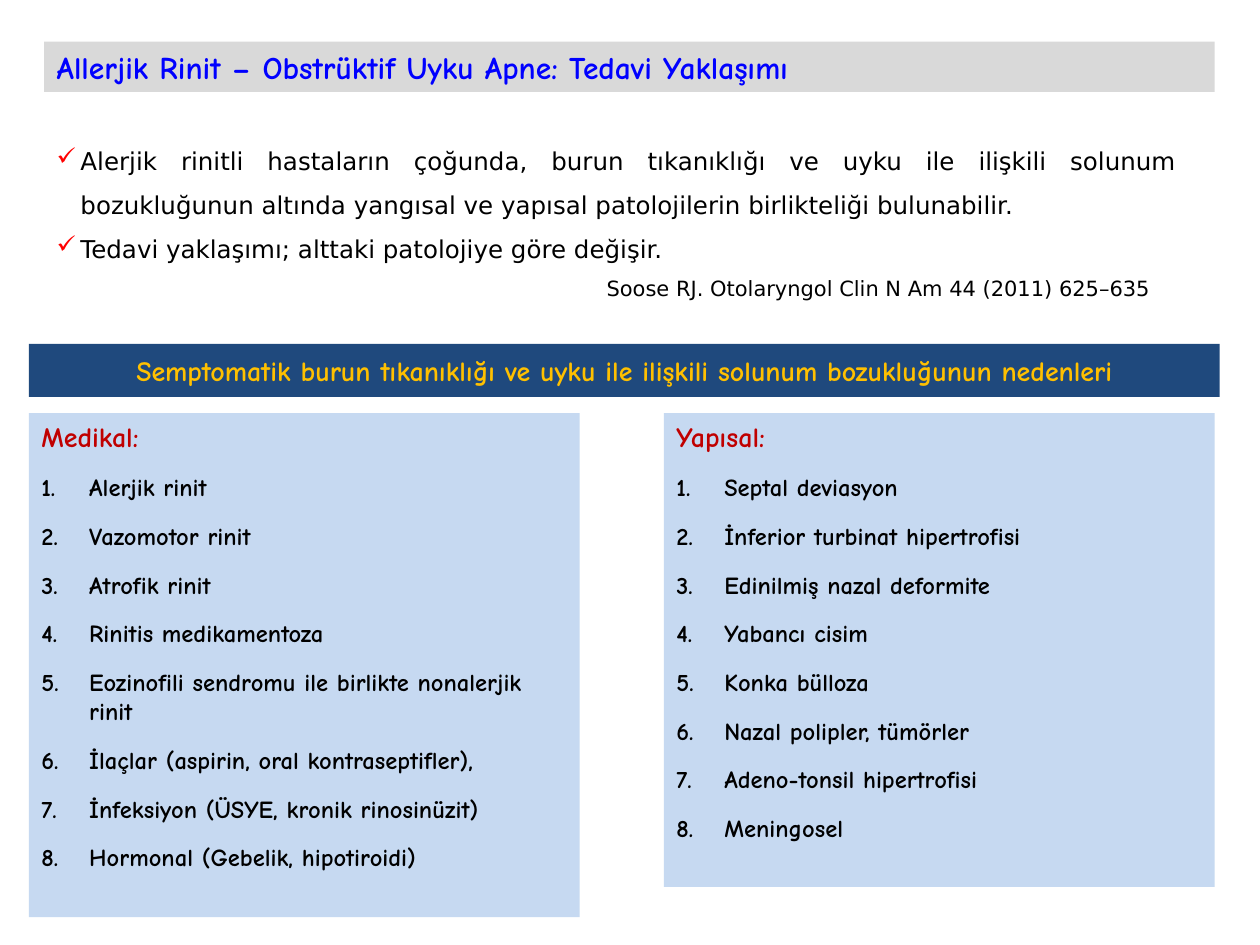
from pptx import Presentation
from pptx.dml.color import RGBColor
from pptx.enum.shapes import MSO_SHAPE as SHAPE
from pptx.enum.text import MSO_ANCHOR as ANCHOR, MSO_AUTO_SIZE as AUTO, PP_ALIGN as ALIGN
from pptx.oxml.ns import qn
from pptx.util import Inches, Pt
from lxml.etree import SubElement

TITLE = "Allerjik Rinit – Obstrüktif Uyku Apne: Tedavi Yaklaşımı"
POINTS = [
    "Alerjik rinitli hastaların çoğunda, burun tıkanıklığı ve uyku ile ilişkili solunum "
    "bozukluğunun altında yangısal ve yapısal patolojilerin birlikteliği bulunabilir.",
    "Tedavi yaklaşımı; alttaki patolojiye göre değişir.",
]
CITATION = "Soose RJ. Otolaryngol Clin N Am 44 (2011) 625–635"
BAND = "Semptomatik burun tıkanıklığı ve uyku ile ilişkili solunum bozukluğunun nedenleri"
CAUSES = [
    ("Medikal:", 4, [
        "Alerjik rinit", "Vazomotor rinit", "Atrofik rinit", "Rinitis medikamentoza",
        "Eozinofili sendromu ile birlikte nonalerjik rinit",
        "İlaçlar (aspirin, oral kontraseptifler),",
        "İnfeksiyon (ÜSYE, kronik rinosinüzit)", "Hormonal (Gebelik, hipotiroidi)"]),
    ("Yapısal:", 3.76, [
        "Septal deviasyon", "İnferior turbinat hipertrofisi", "Edinilmiş nazal deformite",
        "Yabancı cisim", "Konka bülloza", "Nazal polipler, tümörler",
        "Adeno-tonsil hipertrofisi", "Meningosel"]),
]

COMIC, SANS = "Comic Neue", "DejaVu Sans"
THEME = {
    "fill": {"title": "D9D9D9", "band": "1F497D", "panel": "C6D9F1"},
    "check": "FF0000",
    "title": {"name": COMIC, "size": Pt(18), "bold": True, "color": "0000FF"},
    "point": {"name": SANS, "size": Pt(14), "bold": False, "color": "000000"},
    "citation": {"name": SANS, "size": Pt(12), "bold": False, "color": "000000"},
    "band": {"name": COMIC, "size": Pt(16), "bold": True, "color": "FFC000"},
    "heading": {"name": COMIC, "size": Pt(16), "bold": True, "color": "C00000"},
    "cause": {"name": COMIC, "size": Pt(14), "bold": True, "color": "000000"},
}
LEFT, WIDTH = 0.35, 9.29
PANEL_LEFT, PANEL_TOP, PANEL_WIDTH, PANEL_STEP = 0.23, 3.28, 4.37, 5.04


def set_fill(sp, name):
    sp.fill.solid()
    sp.fill.fore_color.rgb = RGBColor.from_string(THEME["fill"][name])


def add_box(slide, at, fill):
    sp = slide.shapes.add_shape(SHAPE.RECTANGLE, *map(Inches, at))
    sp.shadow.inherit = False
    sp.line.fill.background()
    set_fill(sp, fill)
    return sp


def set_frame(sp, anchor=ANCHOR.TOP):
    tf = sp.text_frame
    frame = {"word_wrap": True, "auto_size": AUTO.NONE, "vertical_anchor": anchor,
             "margin_left": Inches(0.1), "margin_right": Inches(0.1),
             "margin_top": Inches(0.05), "margin_bottom": Inches(0.05)}
    for key, value in frame.items():
        setattr(tf, key, value)
    return tf


def write(tf, text, style, **layout):
    p = tf.paragraphs[0] if not tf.paragraphs[0].runs else tf.add_paragraph()
    r = p.add_run()
    r.text = text
    for key, value in THEME[style].items():
        if key == "color":
            r.font.color.rgb = RGBColor.from_string(value)
        else:
            setattr(r.font, key, value)
    for key, value in layout.items():
        setattr(p, key, value)
    return p


def hang(p, indent):
    pPr = p._p.get_or_add_pPr()
    pPr.set("marL", str(Inches(indent)))
    pPr.set("indent", str(-Inches(indent)))
    return pPr


def main():
    prs = Presentation()
    prs.slide_width, prs.slide_height = Inches(10), Inches(7.5)
    slide = prs.slides.add_slide(prs.slide_layouts[5])

    title = slide.shapes.title
    title.left, title.top, title.width, title.height = map(Inches, (LEFT, 0.33, WIDTH, 0.4))
    set_fill(title, "title")
    write(set_frame(title), TITLE, "title", alignment=ALIGN.LEFT)

    sp = slide.shapes.add_textbox(*map(Inches, (LEFT, 0.99, WIDTH, 1.46)))
    tf = set_frame(sp)
    tf.margin_right = Inches(0.3)
    for text in POINTS:
        p = write(tf, text, "point", alignment=ALIGN.JUSTIFY, line_spacing=1.5)
        pPr = hang(p, 0.19)
        SubElement(SubElement(pPr, qn("a:buClr")), qn("a:srgbClr")).set("val", THEME["check"])
        SubElement(pPr, qn("a:buChar")).set("char", "✓")
    p = write(tf, CITATION, "citation", alignment=ALIGN.RIGHT, line_spacing=1.5)
    p._p.get_or_add_pPr().set("marR", str(Inches(0.21)))

    band = add_box(slide, (PANEL_LEFT, 2.73, 9.45, 0.42), "band")
    write(set_frame(band, ANCHOR.MIDDLE), BAND, "band", alignment=ALIGN.CENTER)

    for i, (heading, height, causes) in enumerate(CAUSES):
        at = (PANEL_LEFT + i * PANEL_STEP, PANEL_TOP, PANEL_WIDTH, height)
        tf = set_frame(add_box(slide, at, "panel"))
        hang(write(tf, heading, "heading", alignment=ALIGN.LEFT), 0.38)
        for cause in causes:
            p = write(tf, cause, "cause", alignment=ALIGN.LEFT, space_before=Pt(11))
            SubElement(hang(p, 0.38), qn("a:buAutoNum")).set("type", "arabicPeriod")

    prs.save("out.pptx")


if __name__ == "__main__":
    main()
